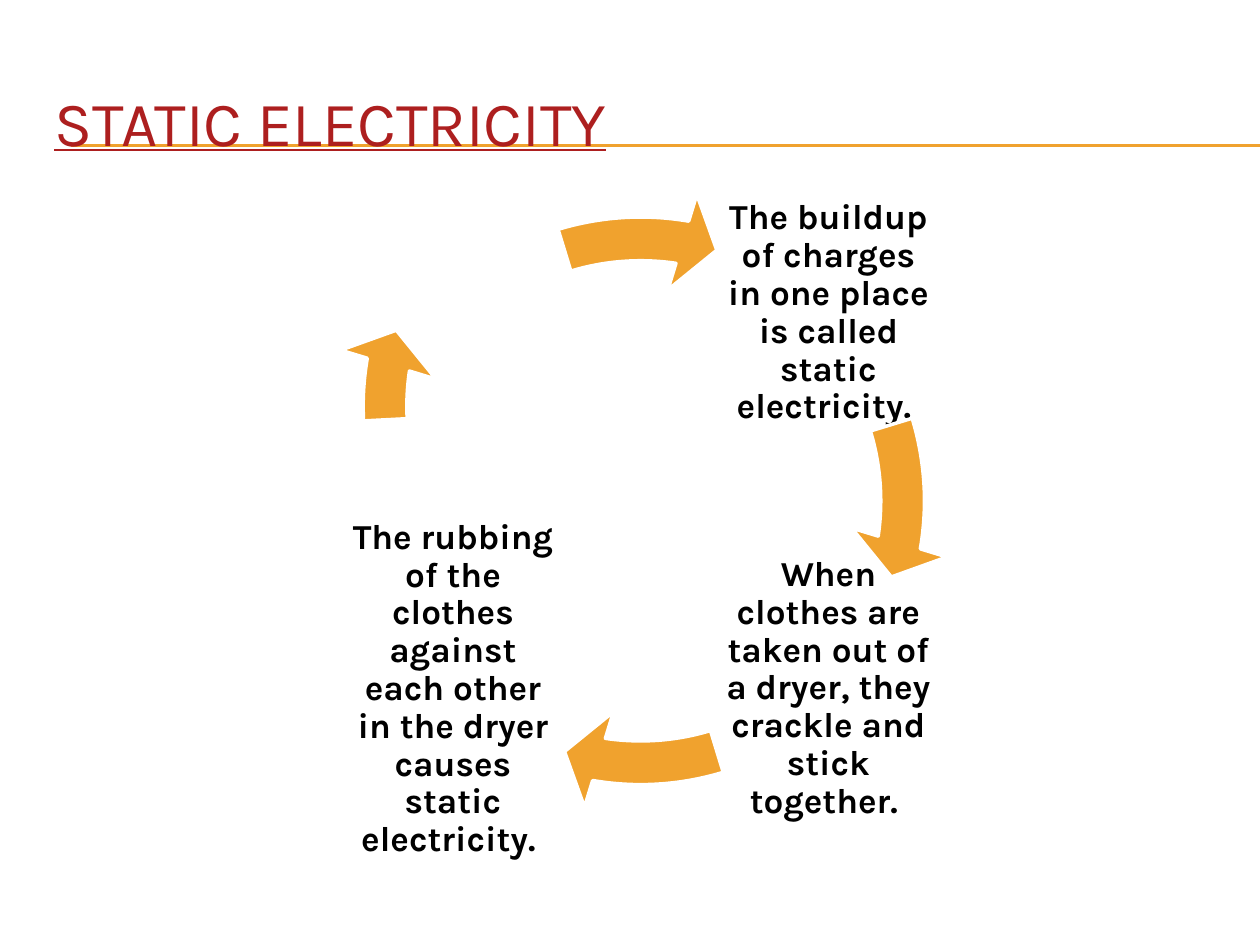
from lxml import etree
from pptx import Presentation
from pptx.dml.color import RGBColor
from pptx.enum.shapes import MSO_CONNECTOR, MSO_SHAPE
from pptx.enum.text import MSO_ANCHOR, PP_ALIGN
from pptx.oxml.ns import qn
from pptx.util import Inches, Pt

LINE = MSO_CONNECTOR.STRAIGHT
ARROW = MSO_SHAPE.CIRCULAR_ARROW
MID = MSO_ANCHOR.MIDDLE
LEFT, CENTER = PP_ALIGN.LEFT, PP_ALIGN.CENTER
GOLD = RGBColor(0xF0, 0xA2, 0x2E)
RED = RGBColor(0xAD, 0x1F, 0x1F)
BLACK = RGBColor(0, 0, 0)
WHITE = RGBColor(255, 255, 255)

deck = Presentation()
deck.slide_width, deck.slide_height = Inches(10), Inches(7.5)
COL = deck.slide_width // 10
slide = deck.slides.add_slide(deck.slide_layouts[5])
shapes = slide.shapes


def grid(*cells):
    return [round(cell * COL) for cell in cells]


def write(shape, text, size, color, align=CENTER, bold=False, under=False, inset=0.03, space=0.9):
    frame = shape.text_frame
    frame.word_wrap = True
    frame.vertical_anchor = MID
    frame.margin_left = frame.margin_right = Inches(inset)
    frame.margin_top = frame.margin_bottom = Inches(min(inset, 0.05))
    para = frame.paragraphs[0]
    para.alignment = align
    para.line_spacing = space
    run = para.add_run()
    run.text = text
    font = run.font
    font.name, font.size, font.bold = "Karla", Pt(size), bold
    font.underline = under
    font.color.rgb = color


for row in (1.15, 1.16):
    rule = shapes.add_connector(LINE, *grid(0.56, row, 10, row))
    rule.line.color.rgb = GOLD
    rule.line.width = Pt(0.75)
    etree.SubElement(rule._element.spPr, qn("a:effectLst"))

title = shapes.title
title.left, title.top, title.width, title.height = grid(0.33, 0.5, 9.5, 0.92)
write(title, "STATIC ELECTRICITY", 36, RED, align=LEFT, under=True, inset=0.1, space=1)
shapes._spTree.append(title._element)

RING = 4.95
TURN = 54
FULL = 4 * TURN
LONG, SHORT = 15.64, 7.26
steps = [
    ("The buildup of charges in one place is called static electricity. ", 5.7, 1.61, 1.75, 2.61, 1.5, LONG),
    ("When clothes are taken out of a dryer, they crackle and stick together. ", 5.7, 4.59, 1.75, 2.61, 1.5, LONG),
    ("The rubbing of the clothes against each other in the dryer causes static electricity. ",
     2.72, 4.09, 2.76, 2.66, 0.75, SHORT),
    (None, 0, 0, 0, 2.61, 1.5, LONG),
]
for turn, (text, left, top, high, x, y, sweep) in enumerate(steps):
    if text:
        box = shapes.add_textbox(*grid(left, top, 1.75, high))
        write(box, text, 20, BLACK, bold=True)
    arrow = shapes.add_shape(ARROW, *grid(x, y, RING, RING))
    arrow.shadow.inherit = False
    arrow.fill.solid()
    arrow.fill.fore_color.rgb = GOLD
    arrow.line.color.rgb = WHITE
    arrow.line.width = Pt(2)
    end = 5.49 + TURN * turn
    for spot, value in enumerate((0.07, 4.65, end, (end - sweep) % FULL, 0.08)):
        arrow.adjustments[spot] = value

deck.save("out.pptx")
